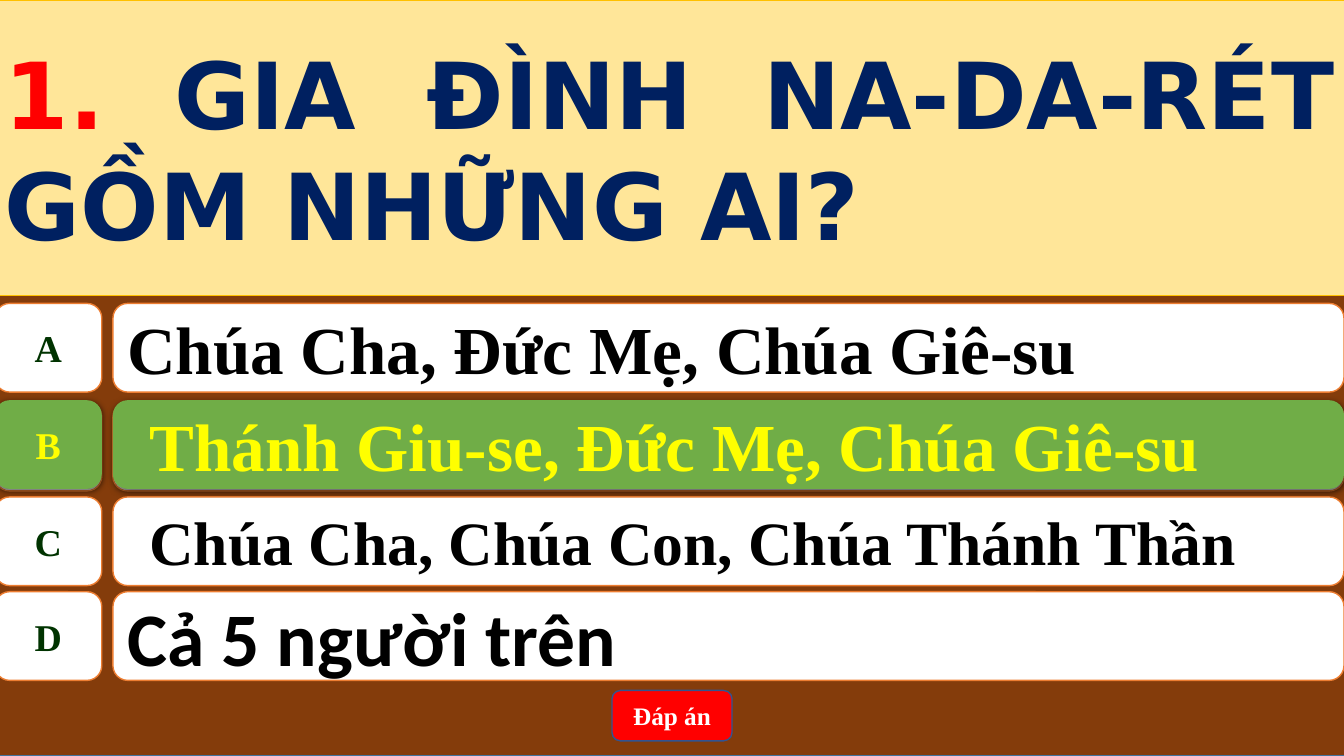
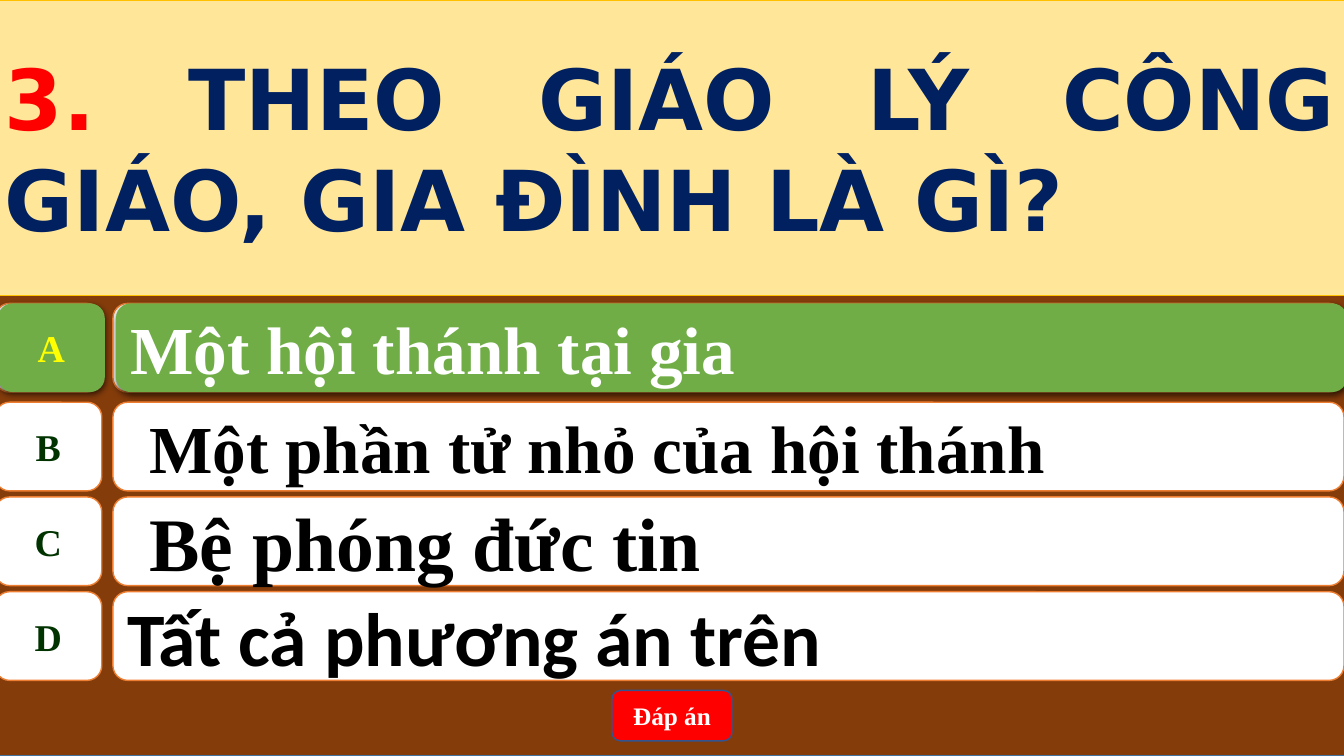
from lxml.etree import SubElement
from pptx import Presentation
from pptx.dml.color import RGBColor
from pptx.enum.shapes import MSO_SHAPE
from pptx.enum.text import MSO_ANCHOR, PP_ALIGN
from pptx.oxml.ns import qn
from pptx.util import Pt

PX = 9144
SLIDE_WIDTH, SLIDE_HEIGHT = 1333, 750
BAND_LEFT, BAND_WIDTH = -5, 1339
QUESTION_HEIGHT = 293
ROW_TOPS = {"A": 301, "B": 399, "C": 493, "D": 587}
ROW_HEIGHT = 88
LETTER_WIDTH = 106
ANSWER_OFFSET, ANSWER_WIDTH = 117, 1221

COLORS = {
    "brown": "843C0B",
    "blue_edge": "43739E",
    "cream": "FFE699",
    "gold": "FFC000",
    "white": "FFFFFF",
    "orange": "ED7D31",
    "green": "70AD47",
    "dark_green": "003300",
    "yellow": "FFFF00",
    "black": "000000",
    "red": "FF0000",
    "button_edge": "325491",
    "navy": "002060",
}
SERIF, SANS, TITLE = "Times New Roman", "Calibri", "DejaVu Sans"

QUIZ = [
    {
        "number": "1. ",
        "question": "GIA ĐÌNH NA-DA-RÉT GỒM NHỮNG AI?",
        "size": 66,
        "answers": {
            "A": ("Chúa Cha, Đức Mẹ, Chúa Giê-su", 48, SERIF, False),
            "B": ("Thánh Giu-se, Đức Mẹ, Chúa Giê-su", 48, SERIF, True),
            "C": ("Chúa Cha, Chúa Con, Chúa Thánh Thần", 44, SERIF, True),
            "D": ("Cả 5 người trên", 54, SANS, False),
        },
        "correct": {"letter": "B", "left": -5, "top": 397, "color": "yellow"},
    },
    {
        "number": "3. ",
        "question": "THEO GIÁO LÝ CÔNG GIÁO, GIA ĐÌNH LÀ GÌ?",
        "size": 60,
        "answers": {
            "A": ("Một hội thánh tại gia", 48, SERIF, False),
            "B": ("Một phần tử nhỏ của hội thánh", 48, SERIF, True),
            "C": ("Bệ phóng đức tin", 54, SERIF, True),
            "D": ("Tất cả phương án trên", 54, SANS, False),
        },
        "correct": {"letter": "A", "left": -2, "top": 301, "color": "white"},
    },
]


def color(name):
    return RGBColor.from_string(COLORS[name])


def set_format(target, values):
    for name, value in values.items():
        setattr(target, name, value)


def add_box(shapes, preset, box, fill, line=None, line_width=1):
    shape = shapes.add_shape(preset, *(length * PX for length in box))
    shape.shadow.inherit = False
    shape.fill.solid()
    shape.fill.fore_color.rgb = color(fill)
    if line:
        shape.line.color.rgb = color(line)
        shape.line.width = Pt(line_width)
    else:
        shape.line.fill.background()
    return shape


def add_shadow(shape):
    effects = shape._element.spPr.find(qn("a:effectLst"))
    shadow = SubElement(effects, qn("a:outerShdw"), blurRad=str(Pt(4.5)),
                        dist=str(Pt(1.5)), dir="5400000", rotWithShape="0")
    black = SubElement(shadow, qn("a:srgbClr"), val=COLORS["black"])
    SubElement(black, qn("a:alpha"), val="63000")


def write(shape, runs, size, font=SERIF, alignment=PP_ALIGN.LEFT, wrap=True):
    frame = shape.text_frame
    set_format(frame, {"vertical_anchor": MSO_ANCHOR.MIDDLE, "word_wrap": wrap})
    paragraph = frame.paragraphs[0]
    paragraph.alignment = alignment
    for text, text_color in runs:
        run = paragraph.add_run()
        run.text = text
        set_format(run.font, {"size": Pt(size), "name": font, "bold": True})
        run.font.color.rgb = color(text_color)
    return paragraph


def add_answer(slide, left, top, letter, answer, fill, line,
               letter_color, answer_color):
    text, size, font, indented = answer
    shapes = slide.shapes.add_group_shape().shapes
    letter_box = add_box(shapes, MSO_SHAPE.FLOWCHART_ALTERNATE_PROCESS,
                         (left, top, LETTER_WIDTH, ROW_HEIGHT), fill, line)
    write(letter_box, [(letter, letter_color)], 27,
          alignment=PP_ALIGN.CENTER, wrap=False)
    answer_box = add_box(
        shapes, MSO_SHAPE.ROUNDED_RECTANGLE,
        (left + ANSWER_OFFSET, top, ANSWER_WIDTH, ROW_HEIGHT), fill, line)
    paragraph = write(answer_box, [(text, answer_color)], size, font)
    if indented:
        paragraph.level = 1
        properties = paragraph._p.get_or_add_pPr()
        properties.set("marL", str(50 * PX))
        properties.set("indent", str(-28 * PX))
    return letter_box, answer_box


def add_question(slide, box, item):
    band = add_box(slide.shapes, MSO_SHAPE.RECTANGLE, box, "cream", "gold", 0.5)
    write(band, [(item["number"], "red"), (item["question"], "navy")],
          item["size"], TITLE, PP_ALIGN.JUSTIFY)


def add_button(slide, box):
    button = add_box(slide.shapes, MSO_SHAPE.ROUNDED_RECTANGLE, box,
                     "red", "button_edge")
    write(button, [("Đáp án", "white")], 18, alignment=PP_ALIGN.CENTER)


def add_correct_answer(slide, item):
    correct = item["correct"]
    letter = correct["letter"]
    for shape in add_answer(slide, correct["left"], correct["top"], letter,
                            item["answers"][letter], "green", None,
                            "yellow", correct["color"]):
        add_shadow(shape)


def add_quiz_slide(presentation, item):
    slide = presentation.slides.add_slide(presentation.slide_layouts[6])
    add_box(slide.shapes, MSO_SHAPE.RECTANGLE,
            (BAND_LEFT, 0, BAND_WIDTH, SLIDE_HEIGHT), "brown", "blue_edge")
    for letter, answer in item["answers"].items():
        add_answer(slide, BAND_LEFT, ROW_TOPS[letter], letter, answer,
                   "white", "orange", "dark_green", "black")
    add_button(slide, (607, 685, 119, 50))
    add_question(slide, (BAND_LEFT, 0, BAND_WIDTH, QUESTION_HEIGHT), item)
    add_correct_answer(slide, item)


def main():
    presentation = Presentation()
    set_format(presentation, {"slide_width": SLIDE_WIDTH * PX,
                              "slide_height": SLIDE_HEIGHT * PX})
    for item in QUIZ:
        add_quiz_slide(presentation, item)
    presentation.save("out.pptx")


if __name__ == "__main__":
    main()
